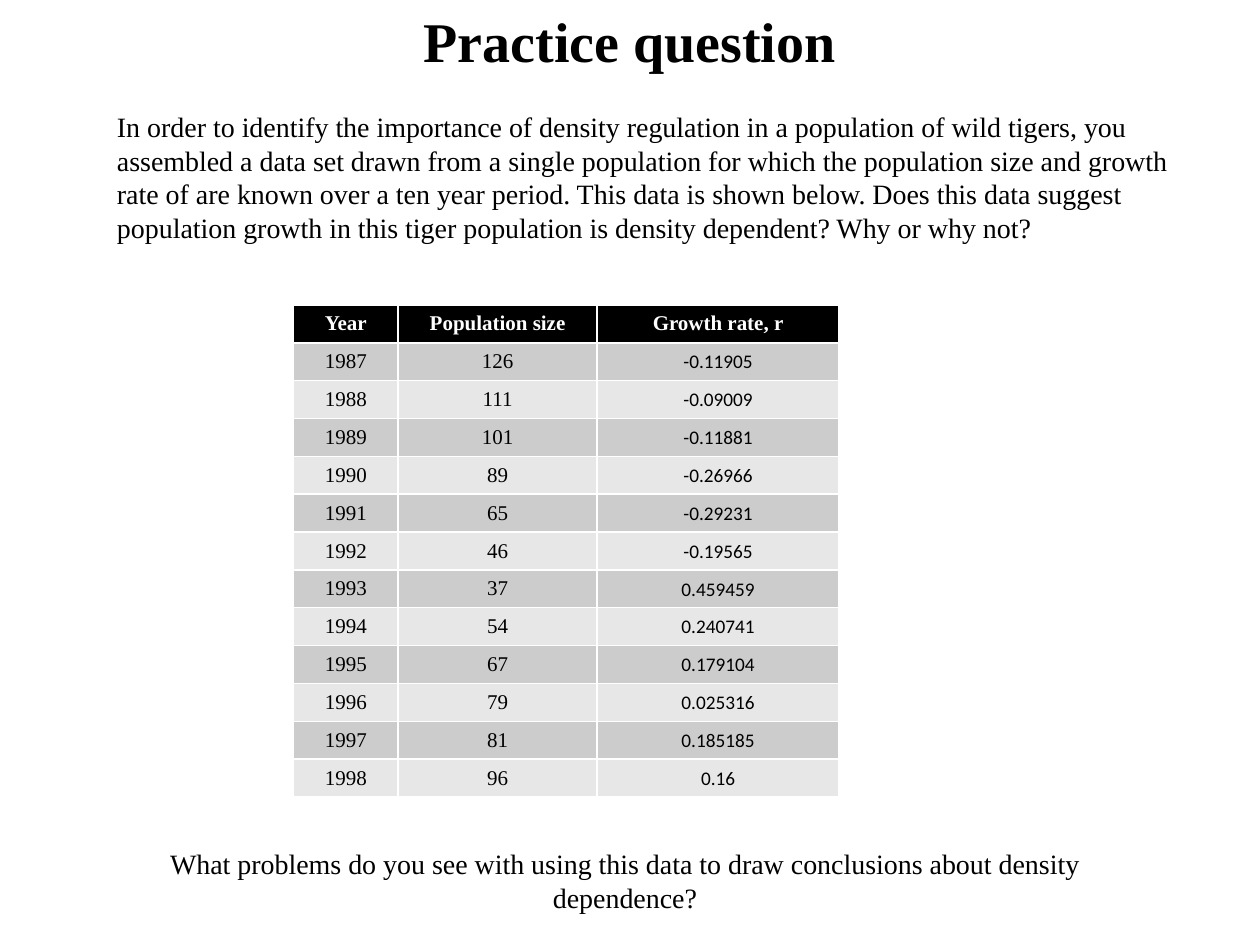
from pptx import Presentation
from pptx.dml.color import RGBColor
from pptx.enum.text import MSO_ANCHOR, MSO_AUTO_SIZE, PP_ALIGN
from pptx.util import Inches, Pt

LEFT, CENTER = PP_ALIGN.LEFT, PP_ALIGN.CENTER
MIDDLE = MSO_ANCHOR.MIDDLE
FIT_SHAPE = MSO_AUTO_SIZE.SHAPE_TO_FIT_TEXT

SERIF, SANS = "Times New Roman", "Calibri"
COLORS = {
    "text": "000000",
    "header": "000000",
    "header_text": "FFFFFF",
    "odd_row": "CCCCCC",
    "even_row": "E7E7E7",
}

TITLE = "Practice question"
PROMPT = (
    "In order to identify the importance of density regulation in a population of wild tigers, "
    "you assembled a data set drawn from a single population for which the population size and "
    "growth rate of are known over a ten year period. This data is shown below. Does this data "
    "suggest population growth in this tiger population is density dependent? Why or why not?"
)
FOLLOW_UP = (
    "What problems do you see with using this data to draw conclusions about density dependence?"
)

HEADINGS = ("Year", "Population size", "Growth rate, r")
COLUMN_WIDTHS = (0.83, 1.58, 1.92)
ROW_HEIGHT = 0.3
FIRST_YEAR = 1987
TIGER_DATA = (
    ("126", "-0.11905"),
    ("111", "-0.09009"),
    ("101", "-0.11881"),
    ("89", "-0.26966"),
    ("65", "-0.29231"),
    ("46", "-0.19565"),
    ("37", "0.459459"),
    ("54", "0.240741"),
    ("67", "0.179104"),
    ("79", "0.025316"),
    ("81", "0.185185"),
    ("96", "0.16"),
)


def rgb(name):
    return RGBColor.from_string(COLORS[name])


def write_text(frame, text, size=12, font=SERIF, color="text", bold=False, align=CENTER):
    paragraph = frame.paragraphs[0]
    paragraph.alignment = align
    run = paragraph.add_run()
    run.text = text
    run.font.size = Pt(size)
    run.font.name = font
    run.font.bold = bold
    run.font.color.rgb = rgb(color)


def add_text(slide, left, top, width, height, text, **text_format):
    box = slide.shapes.add_textbox(Inches(left), Inches(top), Inches(width), Inches(height))
    frame = box.text_frame
    frame.word_wrap = True
    frame.auto_size = FIT_SHAPE
    write_text(frame, text, **text_format)


def fill_cell(cell, text, fill, **text_format):
    cell.fill.solid()
    cell.fill.fore_color.rgb = rgb(fill)
    cell.vertical_anchor = MIDDLE
    write_text(cell.text_frame, text, **text_format)


def tighten_margins(cell):
    cell.margin_left = cell.margin_top = cell.margin_right = Inches(0.01)
    cell.margin_bottom = 0


def add_population_table(slide, left, top):
    row_count = len(TIGER_DATA) + 1
    table = slide.shapes.add_table(
        row_count, len(HEADINGS), Inches(left), Inches(top),
        Inches(sum(COLUMN_WIDTHS)), Inches(ROW_HEIGHT * row_count),
    ).table
    for column, width in zip(table.columns, COLUMN_WIDTHS):
        column.width = Inches(width)
    for row in table.rows:
        row.height = Inches(ROW_HEIGHT)

    for column, heading in enumerate(HEADINGS):
        fill_cell(table.cell(0, column), heading, "header", color="header_text", bold=True)

    for row, (population, growth_rate) in enumerate(TIGER_DATA, start=1):
        band = "odd_row" if row % 2 else "even_row"
        fill_cell(table.cell(row, 0), str(FIRST_YEAR + row - 1), band)
        fill_cell(table.cell(row, 1), population, band)
        growth_cell = table.cell(row, 2)
        tighten_margins(growth_cell)
        fill_cell(growth_cell, growth_rate, band, size=11, font=SANS)


def main():
    presentation = Presentation()
    presentation.slide_width = Inches(10)
    presentation.slide_height = Inches(7.5)
    slide = presentation.slides.add_slide(presentation.slide_layouts[6])

    add_text(slide, 0, 0, 10, 0.64, TITLE, size=32, bold=True)
    add_text(slide, 0.83, 0.82, 8.75, 1.18, PROMPT, size=16, align=LEFT)
    add_population_table(slide, 2.33, 2.42)
    add_text(slide, 0.92, 6.67, 8.08, 0.64, FOLLOW_UP, size=16)

    presentation.save("out.pptx")


if __name__ == "__main__":
    main()
